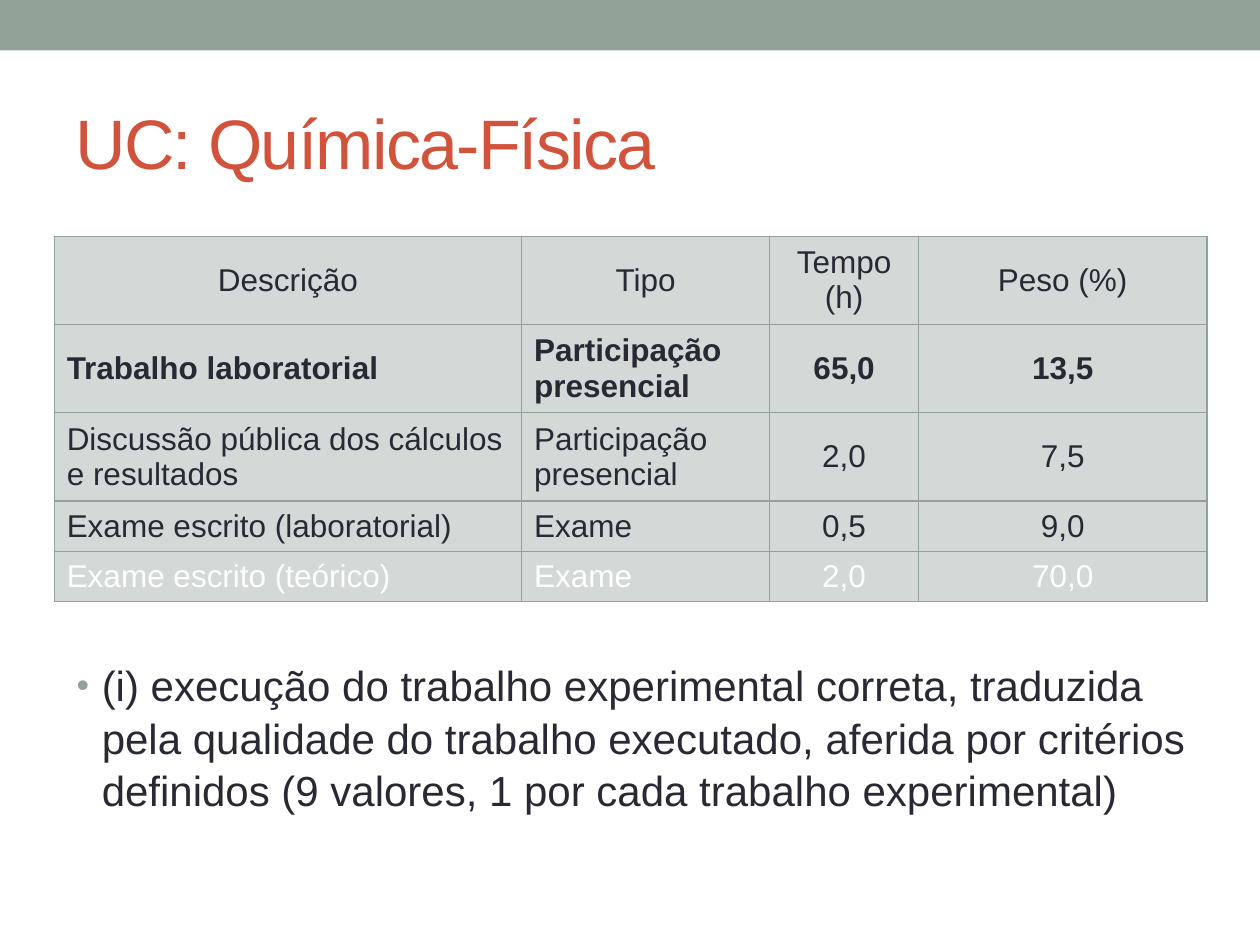
from lxml import etree
from pptx import Presentation
from pptx.dml.color import RGBColor
from pptx.enum.shapes import MSO_SHAPE
from pptx.enum.text import MSO_ANCHOR, PP_ALIGN
from pptx.oxml.ns import qn
from pptx.util import Inches, Pt

RECT = MSO_SHAPE.RECTANGLE
MID, TOP = MSO_ANCHOR.MIDDLE, MSO_ANCHOR.TOP
LEFT, CENTER = PP_ALIGN.LEFT, PP_ALIGN.CENTER
FONT = "Arial"
SAGE, PALE, RUST, INK, WHITE = "93A299", "D4D9D7", "D2533C", "292934", "FFFFFF"
WIDE, HIGH = 10, 7.5

COLS = [3.71, 1.97, 1.18, 2.29]
TALL, LOW = 0.66, 0.38
# Row height, text colour, bold, cell texts
ROWS = [
    (TALL, INK, False, ["Descrição", "Tipo", "Tempo (h)", "Peso (%)"]),
    (TALL, INK, True, ["Trabalho laboratorial", "Participação presencial", "65,0", "13,5"]),
    (TALL, INK, False, ["Discussão pública dos cálculos e resultados",
                        "Participação presencial", "2,0", "7,5"]),
    (LOW, INK, False, ["Exame escrito (laboratorial)", "Exame", "0,5", "9,0"]),
    (LOW, WHITE, False, ["Exame escrito (teórico)", "Exame", "2,0", "70,0"]),
]
NOTE = ("(i) execução do trabalho experimental correta, traduzida pela qualidade "
        "do trabalho executado, aferida por critérios definidos "
        "(9 valores, 1 por cada trabalho experimental)")


def color(code):
    return RGBColor.from_string(code)


def place(x, y, w, h):
    """Turn shares of the slide into lengths."""
    return [Inches(v) for v in (x * WIDE, y * HIGH, w * WIDE, h * HIGH)]


def write(frame, text, size, code, bold=False, align=LEFT):
    frame.text = text
    para = frame.paragraphs[0]
    para.alignment = align
    font = para.runs[0].font
    font.name, font.size, font.bold = FONT, Pt(size), bold
    font.color.rgb = color(code)
    return para


def add_box(slide, box, anchor):
    frame = slide.shapes.add_textbox(*place(*box)).text_frame
    frame.word_wrap = True
    frame.vertical_anchor = anchor
    return frame


def add_band(slide, box):
    band = slide.shapes.add_shape(RECT, *place(*box))
    band.shadow.inherit = False
    band.fill.solid()
    band.fill.fore_color.rgb = color(SAGE)
    band.line.fill.background()


def add_title(slide, box):
    para = write(add_box(slide, box, MID), "UC: Química-Física", 40, RUST)
    para.runs[0].font._element.set("spc", "-100")


def add_rules(cell):
    """Draw a thin line on all four sides of a cell."""
    props = cell._tc.get_or_add_tcPr()
    for spot, side in enumerate(("lnL", "lnR", "lnT", "lnB")):
        line = etree.Element(qn("a:" + side), w=str(Pt(0.75)))
        fill = etree.SubElement(line, qn("a:solidFill"))
        etree.SubElement(fill, qn("a:srgbClr"), val=SAGE)
        props.insert(spot, line)


def add_grid(slide, box):
    table = slide.shapes.add_table(len(ROWS), len(COLS), *place(*box)).table
    for col, width in zip(table.columns, COLS):
        col.width = Inches(width)
    for r, (height, code, bold, texts) in enumerate(ROWS):
        table.rows[r].height = Inches(height)
        for c, text in enumerate(texts):
            cell = table.cell(r, c)
            cell.vertical_anchor = MID
            cell.fill.solid()
            cell.fill.fore_color.rgb = color(PALE)
            if r == 0:
                cell.margin_left = cell.margin_right = Inches(0.04)
            align = CENTER if r == 0 or c > 1 else LEFT
            write(cell.text_frame, text, 18, code, bold, align)
            add_rules(cell)


def add_note(slide, box):
    frame = add_box(slide, box, TOP)
    frame.margin_top = Inches(1)
    para = write(frame, NOTE, 24, INK)
    para.line_spacing = 1.04
    # Hanging bullet
    props = para._p.get_or_add_pPr()
    props.set("marL", str(Inches(0.2)))
    props.set("indent", str(-Inches(0.2)))
    tint = etree.SubElement(props, qn("a:buClr"))
    etree.SubElement(tint, qn("a:srgbClr"), val=SAGE)
    etree.SubElement(props, qn("a:buSzPct"), val="85000")
    etree.SubElement(props, qn("a:buFont"), typeface=FONT)
    etree.SubElement(props, qn("a:buChar"), char="•")


def main():
    deck = Presentation()
    deck.slide_width, deck.slide_height = Inches(WIDE), Inches(HIGH)
    slide = deck.slides.add_slide(deck.slide_layouts[6])
    add_band(slide, (0, 0, 1, 0.4 / HIGH))
    add_title(slide, (0.05, 0.58 / HIGH, 0.9, 1.08 / HIGH))
    add_note(slide, (0.051, 4.22 / HIGH, 0.906, 2.87 / HIGH))
    add_grid(slide, (0.043, 0.25, sum(COLS) / WIDE, sum(row[0] for row in ROWS) / HIGH))
    deck.save("out.pptx")


if __name__ == "__main__":
    main()
